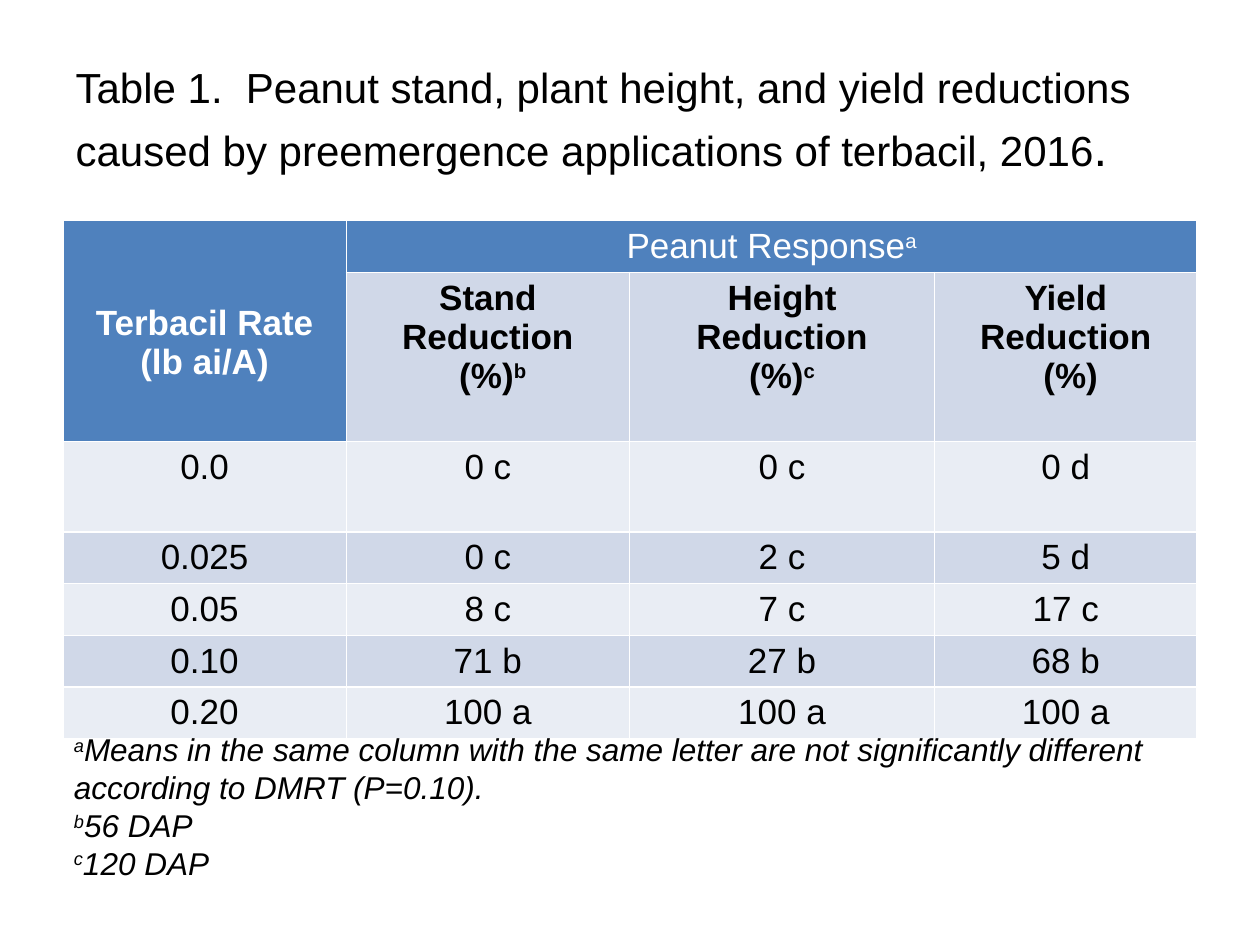
import pptx
import pptx.util
import pptx.dml.color
import pptx.enum.text
import pptx.oxml
import pptx.oxml.ns
from pptx.util import Cm

COLORS = {"text": "000000", "light": "FFFFFF", "head": "4F81BD",
          "band": "D0D8E8", "pale": "E9EDF4"}
CENTER = pptx.enum.text.PP_ALIGN.CENTER
LEFT = pptx.enum.text.PP_ALIGN.LEFT


def rgb(name):
    return pptx.dml.color.RGBColor.from_string(COLORS[name])


class Deck:
    font = "Arial"

    def __init__(self):
        self.prs = pptx.Presentation()
        self.prs.slide_width, self.prs.slide_height = Cm(25.4), Cm(19.05)
        self.s = self.prs.slides.add_slide(self.prs.slide_layouts[5])

    def run(self, p, text, size, color="text", raised=False, **extra):
        r = p.add_run()
        r.text = text
        values = {"name": self.font, "size": pptx.util.Pt(size), "bold": False, **extra}
        for key, value in values.items():
            setattr(r.font, key, value)
        r.font.color.rgb = rgb(color)
        if raised:
            r._r.get_or_add_rPr().set("baseline", "30000")

    def lines(self, tf, lines, size, align=LEFT, **style):
        for i, line in enumerate(lines):
            p = tf.add_paragraph() if i else tf.paragraphs[0]
            p.alignment = align
            for j, part in enumerate(line.split("^")):
                if part:
                    self.run(p, part, size, raised=j % 2 == 1, **style)

    def title(self, runs, left, top, width, height):
        sp = self.s.shapes.title
        sp.left, sp.top, sp.width, sp.height = left, top, width, height
        tf = sp.text_frame
        tf.auto_size = pptx.enum.text.MSO_AUTO_SIZE.NONE
        tf.vertical_anchor = pptx.enum.text.MSO_ANCHOR.MIDDLE
        p = tf.paragraphs[0]
        p.alignment, p.line_spacing = LEFT, 1.1
        for text, size in runs:
            self.run(p, text, size)

    def note(self, lines, left, top, width, height):
        tf = self.s.shapes.add_textbox(left, top, width, height).text_frame
        tf.word_wrap = False
        self.lines(tf, lines, 18, italic=True)

    def table(self, rows, widths, heights, left, top):
        tbl = self.s.shapes.add_table(len(rows), len(widths), left, top,
                                      sum(widths), sum(heights)).table
        for col, width in zip(tbl.columns, widths):
            col.width = width
        for row, height in zip(tbl.rows, heights):
            row.height = height
        for i, texts in enumerate(rows):
            for j, text in enumerate(texts):
                head = i == 0 or (i == 1 and j == 0)
                fill = "head" if head else "band" if i % 2 else "pale"
                bold = i == 1 or (i == 0 and j == 0)
                self.cell(tbl.cell(i, j), text, fill, bold)
        return tbl

    def cell(self, cell, text, fill, bold):
        self.borders(cell)
        cell.fill.solid()
        cell.fill.fore_color.rgb = rgb(fill)
        color = "light" if fill == "head" else "text"
        self.lines(cell.text_frame, text.split("\n"), 20, CENTER, color=color, bold=bold)

    def borders(self, cell):
        tcPr = cell._tc.get_or_add_tcPr()
        for side in "LRTB":
            tcPr.append(pptx.oxml.parse_xml(
                f'<a:ln{side} {pptx.oxml.ns.nsdecls("a")} w="12700"><a:solidFill>'
                f'<a:srgbClr val="{COLORS["light"]}"/></a:solidFill></a:ln{side}>'))


def main():
    deck = Deck()
    deck.title([("Table 1.  Peanut stand, plant height, and yield reductions "
                 "caused by preemergence applications of terbacil, 2016", 24), (".", 28)],
               Cm(1.27), Cm(0.76), Cm(22.86), Cm(3.18))
    rows = [
        ["Terbacil Rate\n(lb ai/A)", "Peanut Response^a", "", ""],
        ["", "Stand Reduction\n (%)^b", "Height Reduction\n(%)^c", "Yield Reduction\n (%)"],
        ["0.0", "0 c", "0 c", "0 d"],
        ["0.025", "0 c", "2 c", "5 d"],
        ["0.05", "8 c", "7 c", "17 c"],
        ["0.10", "71 b", "27 b", "68 b"],
        ["0.20", "100 a", "100 a", "100 a"],
    ]
    widths = [Cm(w) for w in (5.71, 5.71, 6.15, 5.29)]
    heights = [Cm(h) for h in (1.04, 3.41, 1.82, 1.04, 1.04, 1.04, 1.04)]
    tbl = deck.table(rows, widths, heights, Cm(1.27), Cm(4.45))
    tbl.cell(0, 0).merge(tbl.cell(1, 0))
    tbl.cell(0, 1).merge(tbl.cell(0, 3))
    tbl.cell(0, 0).margin_top = Cm(1.67)
    deck.note(["^a^Means in the same column with the same letter are not significantly different",
               "according to DMRT (P=0.10).", "^b^56 DAP", "^c^120 DAP"],
              Cm(1.24), Cm(14.6), Cm(22.48), Cm(3.33))
    deck.prs.save("out.pptx")


if __name__ == "__main__":
    main()
